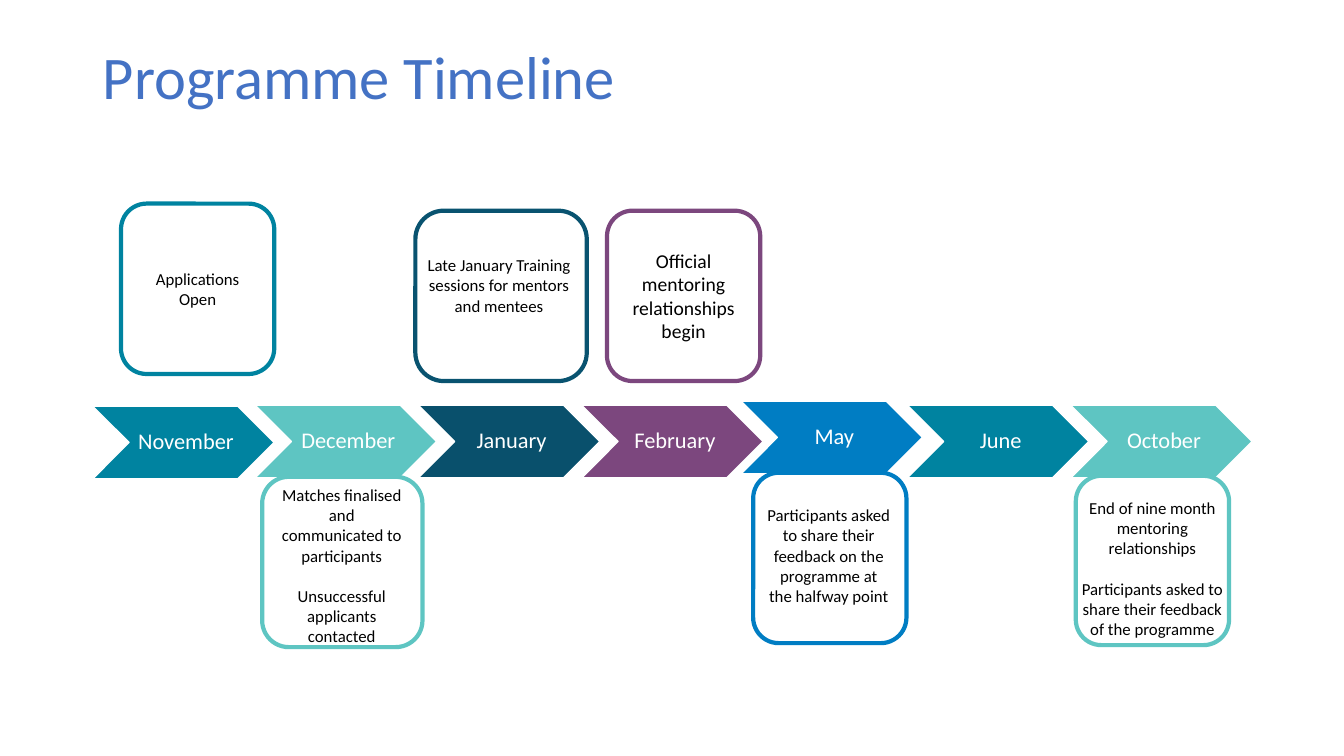
from pptx import Presentation
from pptx.dml.color import RGBColor
from pptx.enum.shapes import MSO_SHAPE
from pptx.enum.text import MSO_ANCHOR, PP_ALIGN
from pptx.util import Pt

PX = 9144  # EMU per px, 100 px to the inch
FONT = "Calibri"
COLORS = {
    "title": "4472C4", "teal": "0083A0", "aqua": "5EC5C2", "navy": "09506C",
    "navy line": "095370", "purple": "7C477E", "blue": "007DC3",
    "white": "FFFFFF", "black": "000000",
}

TITLE = "Programme Timeline"
TITLE_BOX = (92, 40, 1150, 145)

# month, colour, offset from the regular row
MONTHS = [
    ("November", "teal", (0, 1)),
    ("December", "aqua", (0, 0)),
    ("January", "navy", (0, 0)),
    ("February", "purple", (0, 0)),
    ("May", "blue", (-3, -4)),
    ("June", "teal", (0, 0)),
    ("October", "aqua", (0, 0)),
]
FIRST_X, LAST_X, ROW_Y = 92, 1062, 402
CHEVRON_W, CHEVRON_H = 180, 72

# frame, line colour, text area (None: inside the frame), text size, paragraphs
EVENTS = [
    ((120, 202, 152, 169), "teal", None, 12, ["Applications Open"]),
    ((260, 473, 159, 169), "aqua", (268, 476, 142, 209), 12,
     ["Matches finalised and communicated to participants",
      "Unsuccessful applicants contacted"]),
    ((412, 209, 170, 169), "navy line", (410, 248, 170, 91), 12,
     ["Late January Training sessions for mentors and mentees"]),
    ((602, 209, 152, 169), "purple", None, 14,
     ["Official mentoring relationships begin"]),
    ((747, 469, 152, 169), "blue", (751, 496, 142, 131), 12,
     ["Participants asked to share their feedback on the programme "
      "at the halfway point"]),
    ((1067, 472, 152, 168), "aqua", (1058, 489, 170, 151), 12,
     ["End of nine month mentoring relationships",
      "Participants asked to share their feedback of the programme"]),
]
PARAGRAPH_GAP = 14.6


def rgb(name):
    return RGBColor.from_string(COLORS[name])


def emu(box):
    return [v * PX for v in box]


def add_shape(kind, box, line, width, fill=None):
    sp = s.shapes.add_shape(kind, *emu(box))
    sp.shadow.inherit = False
    if fill:
        sp.fill.solid()
        sp.fill.fore_color.rgb = rgb(fill)
    else:
        sp.fill.background()
    sp.line.color.rgb = rgb(line)
    sp.line.width = Pt(width)
    return sp


def write(tf, paragraphs, size, color, anchor, align=PP_ALIGN.CENTER, spacing=1.0):
    tf.word_wrap = True
    tf.vertical_anchor = anchor
    for i, text in enumerate(paragraphs):
        p = tf.add_paragraph() if i else tf.paragraphs[0]
        layout = {"alignment": align, "line_spacing": spacing,
                  "space_before": Pt(PARAGRAPH_GAP if i else 0)}
        for name, value in layout.items():
            setattr(p, name, value)
        r = p.add_run()
        r.text = text
        for name, value in {"name": FONT, "size": Pt(size)}.items():
            setattr(r.font, name, value)
        r.font.color.rgb = rgb(color)


prs = Presentation()
prs.slide_width, prs.slide_height = emu((1333, 750))
s = prs.slides.add_slide(prs.slide_layouts[5])

title = s.shapes.title
title.left, title.top, title.width, title.height = emu(TITLE_BOX)
title.text_frame.margin_top = 7 * PX
write(title.text_frame, [TITLE], 43.2, "title", MSO_ANCHOR.TOP, PP_ALIGN.LEFT, 0.9)

for i, (month, color, (dx, dy)) in enumerate(MONTHS):
    x = FIRST_X + i * (LAST_X - FIRST_X) // (len(MONTHS) - 1)
    sp = add_shape(MSO_SHAPE.CHEVRON, (x + dx, ROW_Y + dy, CHEVRON_W, CHEVRON_H),
                   "white", 1, color)
    tf = sp.text_frame
    for side, margin in {"left": 7, "right": 2, "top": 2, "bottom": 2}.items():
        setattr(tf, f"margin_{side}", margin * PX)
    write(tf, [month], 16, "white", MSO_ANCHOR.MIDDLE, spacing=0.9)

for frame, color, area, size, paragraphs in EVENTS:
    sp = add_shape(MSO_SHAPE.ROUNDED_RECTANGLE, frame, color, 3)
    anchor = MSO_ANCHOR.MIDDLE
    if area:
        sp = s.shapes.add_textbox(*emu(area))
        anchor = MSO_ANCHOR.TOP
    write(sp.text_frame, paragraphs, size, "black", anchor)

prs.save("out.pptx")
